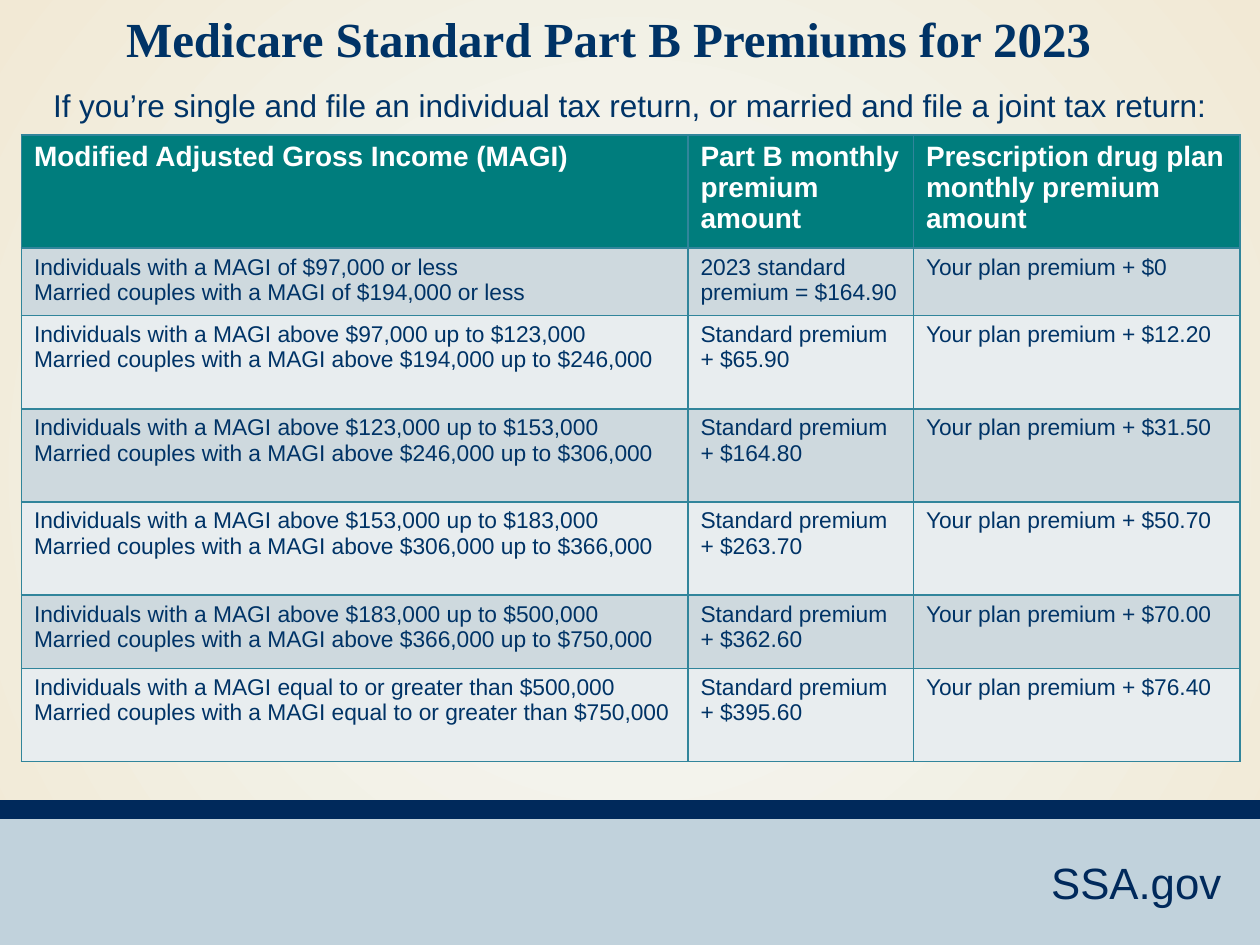
import pptx
import pptx.dml.color
import pptx.enum.shapes
import pptx.enum.text
import pptx.oxml
import pptx.oxml.ns
import pptx.util
from lxml import etree

Inches = pptx.util.Inches
ALIGN = pptx.enum.text.PP_ALIGN

COLORS = {
    "centre": "F3FAFB", "edge": "F2E9D5", "footer": "C1D2DC", "navy": "00295B",
    "text": "003366", "white": "FFFFFF", "header": "007D7D",
    "dark_row": "CED9DE", "light_row": "E8EDEF", "border": "31859B",
}

BANDS = [("footer", (0, 6.45, 10, 1.06)), ("navy", (0, 6.35, 10, 0.15))]

TEXTS = [
    ("SSA.gov", (6.72, 6.74, 3.07, 0.52), ALIGN.RIGHT, "navy",
     {"size": 25, "name": "Arial"}),
    ("Medicare Standard Part B Premiums for 2023", (-0.17, 0, 10, 0.6), ALIGN.CENTER, "text",
     {"size": 28, "name": "Times New Roman", "bold": True}),
    ("If you’re single and file an individual tax return, or married and file a joint tax return:",
     (0, 0.62, 10, 0.43), ALIGN.CENTER, "text", {"size": 18, "name": "Arial"}),
]

HEADERS = ["Modified Adjusted Gross Income (MAGI)", "Part B monthly premium amount",
           "Prescription drug plan monthly premium amount"]
# Income range of individuals, of couples, Part B premium, drug plan surcharge
PREMIUMS = [
    ("of $97,000 or less", "of $194,000 or less", "2023 standard premium = $164.90", "$0"),
    ("above $97,000 up to $123,000", "above $194,000 up to $246,000",
     "Standard premium\n+ $65.90", "$12.20"),
    ("above $123,000 up to $153,000", "above $246,000 up to $306,000",
     "Standard premium\n+ $164.80", "$31.50"),
    ("above $153,000 up to $183,000", "above $306,000 up to $366,000",
     "Standard premium\n+ $263.70", "$50.70"),
    ("above $183,000 up to $500,000", "above $366,000 up to $750,000",
     "Standard premium\n+ $362.60", "$70.00"),
    ("equal to or greater than $500,000", "equal to or greater than $750,000",
     "Standard premium\n+ $395.60", "$76.40"),
]
TABLE_LEFT, TABLE_TOP = 0.17, 1.07
COLUMN_WIDTHS = [5.29, 1.79, 2.59]
ROW_HEIGHTS = [0.81, 0.53, 0.74, 0.74, 0.74, 0.58, 0.74]


def color(name):
    return pptx.dml.color.RGBColor.from_string(COLORS[name])


def paint(target, name):
    target.fill.solid()
    target.fill.fore_color.rgb = color(name)


def write(frame, text, align, color_name, font):
    frame.text = text
    frame.word_wrap = True
    for paragraph in frame.paragraphs:
        paragraph.alignment = align
        paragraph.font.color.rgb = color(color_name)
        for key, value in font.items():
            setattr(paragraph.font, key, pptx.util.Pt(value) if key == "size" else value)


def set_background(slide):
    fill = slide.background.fill
    fill.gradient()
    for stop, name in zip(fill.gradient_stops, ("centre", "edge")):
        stop.color.rgb = color(name)
    qn = pptx.oxml.ns.qn
    gradient = slide.element.find(".//" + qn("a:gradFill"))
    gradient.remove(gradient.find(qn("a:lin")))
    circle = etree.SubElement(gradient, qn("a:path"), path="circle")
    etree.SubElement(circle, qn("a:fillToRect"), {side: "50000" for side in "ltrb"})


def add_borders(cell):
    """Put the four side lines ahead of the cell's fill, as the schema asks."""
    properties = cell._tc.get_or_add_tcPr()
    for position, side in enumerate(("lnL", "lnR", "lnT", "lnB")):
        properties.insert(position, pptx.oxml.parse_xml(
            f'<a:{side} {pptx.oxml.ns.nsdecls("a")} w="12700"><a:solidFill>'
            f'<a:srgbClr val="{COLORS["border"]}"/></a:solidFill></a:{side}>'))


def add_premium_table(slide):
    rows = [HEADERS] + [
        (f"Individuals with a MAGI {single}\nMarried couples with a MAGI {couple}",
         part_b, f"Your plan premium + {surcharge}")
        for single, couple, part_b, surcharge in PREMIUMS]
    table = slide.shapes.add_table(
        len(rows), len(HEADERS), Inches(TABLE_LEFT), Inches(TABLE_TOP),
        Inches(sum(COLUMN_WIDTHS)), Inches(sum(ROW_HEIGHTS))).table
    for column, width in zip(table.columns, COLUMN_WIDTHS):
        column.width = Inches(width)
    for index, (row, height, texts) in enumerate(zip(table.rows, ROW_HEIGHTS, rows)):
        row.height = Inches(height)
        is_header = index == 0
        fill = "header" if is_header else ("light_row", "dark_row")[index % 2]
        font = {"size": 16 if is_header else 13, "name": "Arial", "bold": is_header}
        for cell, text in zip(row.cells, texts):
            paint(cell, fill)
            add_borders(cell)
            write(cell.text_frame, text, ALIGN.LEFT, "white" if is_header else "text", font)


def main():
    presentation = pptx.Presentation()
    presentation.slide_width, presentation.slide_height = Inches(10), Inches(7.5)
    slide = presentation.slides.add_slide(presentation.slide_layouts[6])
    set_background(slide)
    for name, box in BANDS:
        band = slide.shapes.add_shape(
            pptx.enum.shapes.MSO_SHAPE.RECTANGLE, *map(Inches, box))
        band.shadow.inherit = False
        paint(band, name)
        band.line.fill.background()
    for text, box, align, color_name, font in TEXTS:
        frame = slide.shapes.add_textbox(*map(Inches, box)).text_frame
        frame.vertical_anchor = pptx.enum.text.MSO_ANCHOR.MIDDLE
        write(frame, text, align, color_name, font)
    add_premium_table(slide)
    presentation.save("out.pptx")


if __name__ == "__main__":
    main()
